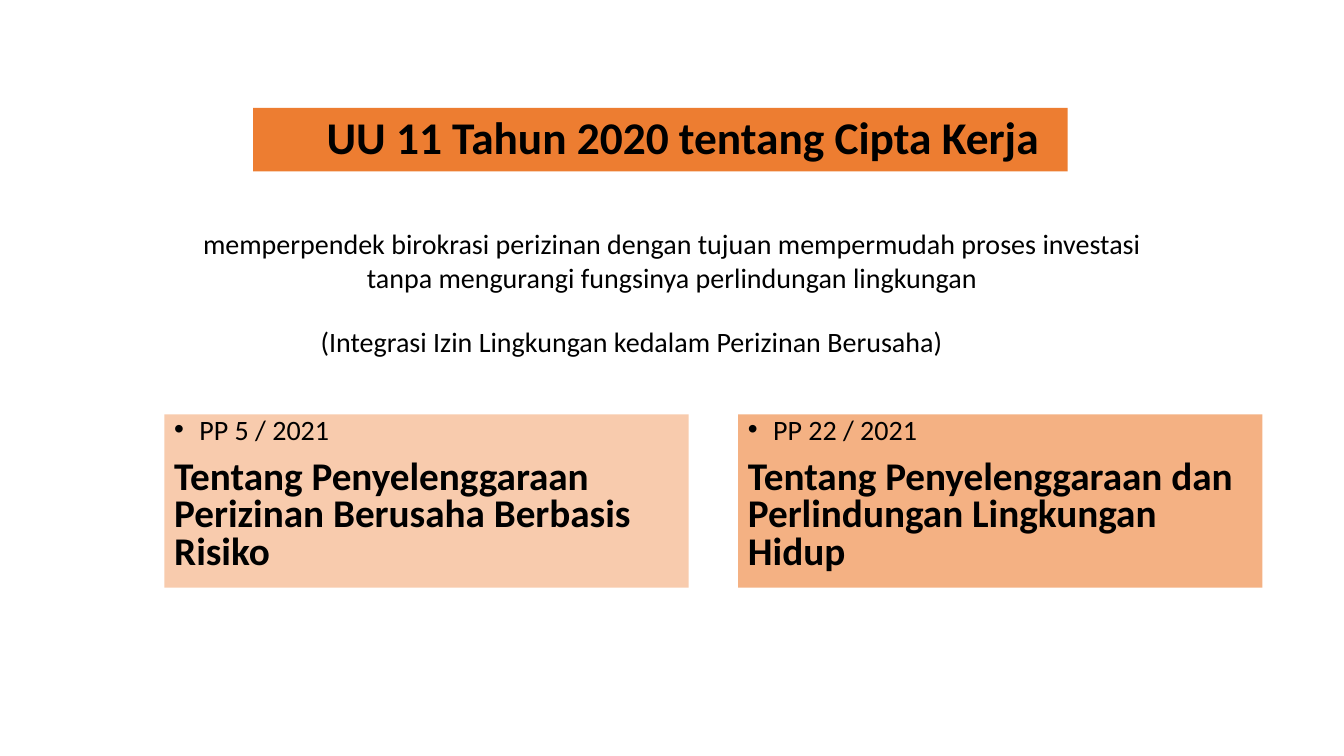
from pptx import Presentation
from pptx.dml.color import RGBColor as Rgb
from pptx.enum.shapes import MSO_SHAPE as Shape
from pptx.enum.text import MSO_ANCHOR as Anchor, PP_ALIGN as Align
from pptx.oxml.ns import qn
from pptx.util import Pt
from lxml.etree import SubElement as Sub

PX = 9144
COLORS = {"text": "000000", "title": "ED7D31", "risk": "F8CBAD", "land": "F4B183"}
NOTE = {"alignment": Align.CENTER}
HEAD = {"alignment": Align.LEFT, "line_spacing": 0.9}
BODY = {"alignment": Align.LEFT, "line_spacing": 0.8, "space_before": Pt(10)}


def emu(*sizes):
    """Turn px lengths into EMU."""
    return [size * PX for size in sizes]


def apply(item, form):
    """Set each format value on an item."""
    for name, value in form.items():
        setattr(item, name, value)


def write(para, text, size, form, bold=False):
    """Fill a paragraph with one formatted run."""
    apply(para, form)
    run = para.add_run()
    run.text = text
    apply(run.font, {"name": "Calibri", "size": Pt(size), "bold": bold})
    run.font.color.rgb = Rgb.from_string(COLORS["text"])


def bullet(para, gap):
    """Give a paragraph a hanging round bullet."""
    props = para._p.get_or_add_pPr()
    props.set("marL", str(gap * PX))
    props.set("indent", str(-gap * PX))
    Sub(props, qn("a:buFont"), typeface="Arial")
    Sub(props, qn("a:buChar"), char="•")


def add_note(slide, box, text):
    """Add a centred line of plain text."""
    frame = slide.shapes.add_textbox(*emu(*box)).text_frame
    frame.word_wrap = True
    write(frame.paragraphs[0], text, 20, NOTE)


def add_panel(slide, box, color, anchor, left=10):
    """Add a filled rectangle and return its text frame."""
    panel = slide.shapes.add_shape(Shape.RECTANGLE, *emu(*box))
    panel.shadow.inherit = False
    panel.fill.solid()
    panel.fill.fore_color.rgb = Rgb.from_string(COLORS[color])
    panel.line.fill.background()
    form = {"word_wrap": True, "vertical_anchor": anchor, "margin_left": left * PX}
    apply(panel.text_frame, form)
    return panel.text_frame


def add_rule(slide, box, color, code, topic):
    """Add a panel with a regulation number and its topic."""
    frame = add_panel(slide, box, color, Anchor.TOP)
    first = frame.paragraphs[0]
    write(first, code, 20, BODY)
    bullet(first, 25)
    write(frame.add_paragraph(), topic, 28, BODY, True)


def main():
    """Build and save the slide."""
    deck = Presentation()
    deck.slide_width, deck.slide_height = emu(1333, 750)
    slide = deck.slides.add_slide(deck.slide_layouts[6])
    add_note(slide, (167, 220, 999, 77),
             "memperpendek birokrasi perizinan dengan tujuan mempermudah proses "
             "investasi tanpa mengurangi fungsinya perlindungan lingkungan")
    add_note(slide, (125, 317, 1003, 44),
             "(Integrasi Izin Lingkungan kedalam Perizinan Berusaha)")
    head = add_panel(slide, (251, 107, 808, 63), "title", Anchor.MIDDLE, 73)
    write(head.paragraphs[0], "UU 11 Tahun 2020 tentang Cipta Kerja", 32.4, HEAD, True)
    rules = [
        ("risk", "PP 5 / 2021",
         "Tentang Penyelenggaraan Perizinan Berusaha Berbasis Risiko"),
        ("land", "PP 22 / 2021",
         "Tentang Penyelenggaraan dan Perlindungan Lingkungan Hidup"),
    ]
    for col, rule in enumerate(rules):
        add_rule(slide, (163 + col * 569, 411, 520, 172), *rule)
    deck.save("out.pptx")


if __name__ == "__main__":
    main()
